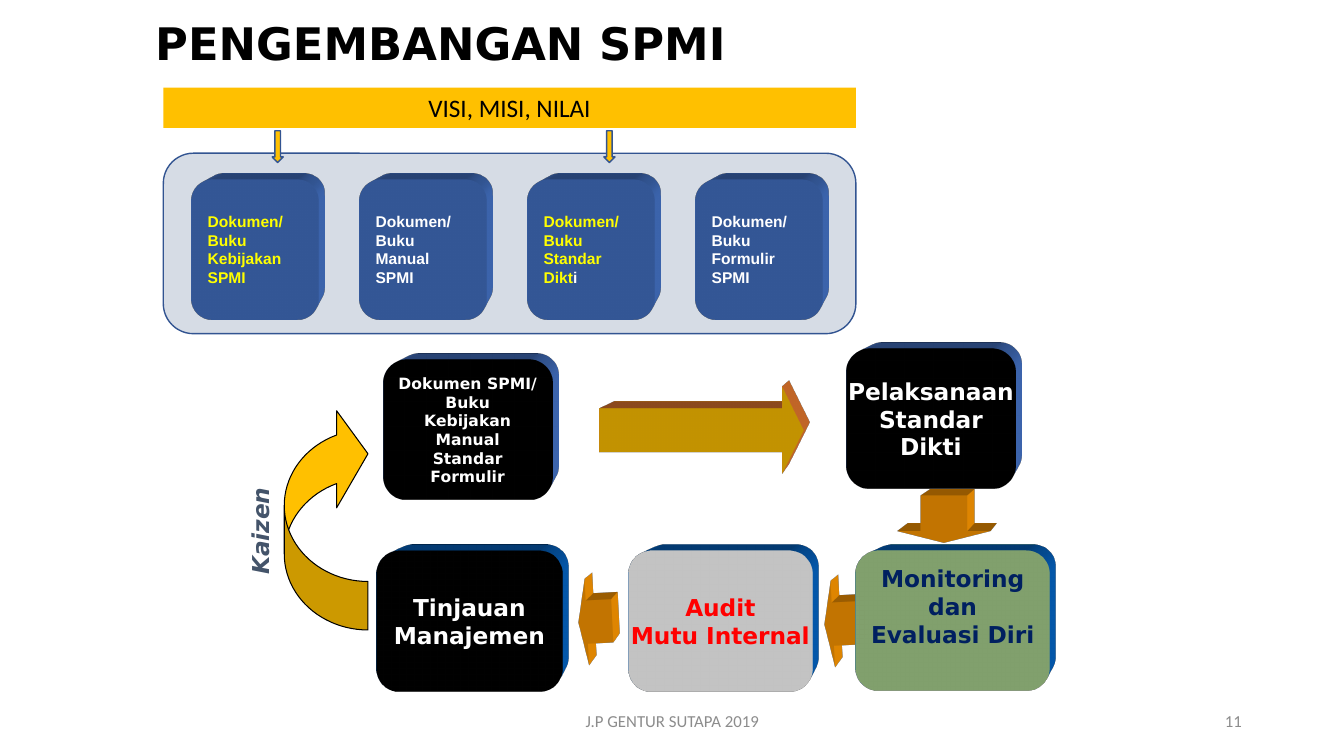
from dataclasses import dataclass
from typing import Optional

from lxml import etree
from pptx import Presentation
from pptx import util as u
from pptx.dml.color import RGBColor
from pptx.enum import shapes, text

A = "http://schemas.openxmlformats.org/drawingml/2006/main"
G = shapes.MSO_SHAPE
AL = text.PP_ALIGN
AN = text.MSO_ANCHOR


@dataclass(frozen=True)
class Theme:
    black: str = "000000"
    white: str = "FFFFFF"
    red: str = "FF0000"
    yellow: str = "FFFF00"
    navy: str = "002060"
    slate: str = "44546A"
    grey: str = "8C8C8C"
    gold: str = "FFC000"
    orange: str = "FF9900"
    rust: str = "ED7D31"
    green: str = "A9D18E"
    blue: str = "4472C4"
    deep_blue: str = "0563C1"
    outline: str = "325491"
    panel: str = "D6DCE5"
    title_size: float = 32
    banner_size: float = 18
    card_size: float = 16.6
    footer_size: float = 12
    small_size: float = 11.1
    heading_font: str = "DejaVu Sans"
    body_font: str = "Calibri"
    document_font: str = "Arial"


T = Theme()


@dataclass(frozen=True)
class Box:
    x: float
    y: float
    w: float
    h: float


@dataclass(frozen=True)
class Card:
    box: Box
    label: str
    fill: str
    color: str
    side: str
    size: float = T.card_size
    font: str = T.heading_font
    align: AL = AL.CENTER
    tail: str = ""
    bottom: float = 0.05


@dataclass(frozen=True)
class Arrow:
    box: Box
    kind: G
    fill: str
    side: Optional[str] = None
    line: Optional[str] = None
    line_width: float = 1
    rotation: float = 0
    adjustments: tuple[float, ...] = ()


CARD_H = 18.53
DOCUMENT_PITCH = 12.5
BLOCK = (0.5, 0.25)

DOCUMENTS = [
    ("Dokumen/\nBuku\nKebijakan\nSPMI", T.yellow, ""),
    ("Dokumen/\nBuku\nManual\nSPMI", T.white, ""),
    ("Dokumen/\nBuku\nStandar\nDikt", T.yellow, "i"),
    ("Dokumen/\nBuku\nFormulir\nSPMI", T.white, ""),
]

CYCLE = [
    Card(Box(27.98, 72.93, 13.88, CARD_H), "Tinjauan\nManajemen",
         T.black, T.white, T.deep_blue),
    Arrow(Box(43.05, 76.53, 2.48, 11.33), G.RIGHT_ARROW, T.orange, T.orange,
          rotation=177, adjustments=BLOCK),
    Card(Box(46.73, 72.93, 13.73, CARD_H), "Audit\nMutu Internal",
         T.white, T.red, T.deep_blue),
    Arrow(Box(61.35, 76.8, 2.48, 11.33), G.RIGHT_ARROW, T.orange, T.orange,
          rotation=177, adjustments=BLOCK),
    Card(Box(63.68, 72.8, 14.4, CARD_H), "Monitoring\ndan\nEvaluasi Diri",
         T.green, T.navy, T.deep_blue, bottom=0.33),
    Arrow(Box(68.48, 62.53, 3.45, 12.27), G.RIGHT_ARROW, T.orange, T.orange,
          rotation=90, adjustments=BLOCK),
    Card(Box(28.5, 47.6, 12.6, CARD_H),
         "Dokumen SPMI/\nBuku\nKebijakan\nManual\nStandar\nFormulir",
         T.black, T.white, T.blue, size=T.small_size),
    Arrow(Box(44.63, 51.2, 15.15, 11.47), G.RIGHT_ARROW, T.gold, T.rust,
          adjustments=BLOCK),
    Card(Box(63, 46.13, 12.53, CARD_H), "Pelaksanaan\nStandar\nDikti",
         T.black, T.white, T.blue),
    Arrow(Box(21.15, 53.6, 6.23, 29.73), G.CURVED_LEFT_ARROW, T.gold,
          line=T.black, line_width=0.75, rotation=180, adjustments=(0.58, 1.16, 0.375)),
]

prs = Presentation()
prs.slide_width = u.Inches(13.33)
prs.slide_height = u.Inches(7.5)
s = prs.slides.add_slide(prs.slide_layouts[5])


def place(box: Box) -> tuple[int, int, int, int]:
    return (int(prs.slide_width * box.x / 100), int(prs.slide_height * box.y / 100),
            int(prs.slide_width * box.w / 100), int(prs.slide_height * box.h / 100))


def write(sp, label: str, *, size: float, color: str, font: str = T.heading_font,
          bold: bool = False, italic: bool = False, align: AL = AL.LEFT,
          anchor: AN = AN.TOP, wrap: bool = True, spacing: float = 1,
          tail: str = "", bottom: float = 0.05) -> None:
    tf = sp.text_frame
    tf.auto_size = text.MSO_AUTO_SIZE.NONE
    tf.word_wrap = wrap
    tf.vertical_anchor = anchor
    tf.margin_left = tf.margin_right = u.Inches(0.1)
    tf.margin_top = u.Inches(0.05)
    tf.margin_bottom = u.Inches(bottom)
    lines = label.split("\n")
    for i, line in enumerate(lines):
        p = tf.paragraphs[0] if i == 0 else tf.add_paragraph()
        p.alignment = align
        p.line_spacing = spacing
        runs = [(line, color)]
        if tail and i == len(lines) - 1:
            runs.append((tail, T.white))
        for words, shade in runs:
            r = p.add_run()
            r.text = words
            r.font.size = u.Pt(size)
            r.font.name = font
            r.font.bold = bold
            r.font.italic = italic
            r.font.color.rgb = RGBColor.from_string(shade)


def extrude(sp, side: str) -> None:
    props = sp._element.spPr
    scene = etree.SubElement(props, f"{{{A}}}scene3d")
    etree.SubElement(scene, f"{{{A}}}camera", prst="legacyPerspectiveTopRight")
    etree.SubElement(scene, f"{{{A}}}lightRig", rig="legacyFlat3", dir="b")
    solid = etree.SubElement(props, f"{{{A}}}sp3d", extrusionH="430200",
                             prstMaterial="legacyMatte")
    tint = etree.SubElement(solid, f"{{{A}}}extrusionClr")
    etree.SubElement(tint, f"{{{A}}}srgbClr", val=side)


def add_shape(kind: G, box: Box, fill: str, line: Optional[str] = None,
              line_width: float = 1):
    sp = s.shapes.add_shape(kind, *place(box))
    sp.shadow.inherit = False
    sp.fill.solid()
    sp.fill.fore_color.rgb = RGBColor.from_string(fill)
    if line:
        sp.line.color.rgb = RGBColor.from_string(line)
        sp.line.width = u.Pt(line_width)
    else:
        sp.line.fill.background()
    return sp


def add_card(card: Card) -> None:
    sp = add_shape(G.FLOWCHART_ALTERNATE_PROCESS, card.box, card.fill)
    extrude(sp, card.side)
    write(sp, card.label, size=card.size, color=card.color, font=card.font, bold=True,
          align=card.align, anchor=AN.MIDDLE, wrap=False, tail=card.tail,
          bottom=card.bottom)


def add_arrow(arrow: Arrow) -> None:
    sp = add_shape(arrow.kind, arrow.box, arrow.fill, arrow.line, arrow.line_width)
    sp.rotation = arrow.rotation
    for i, value in enumerate(arrow.adjustments):
        sp.adjustments[i] = value
    if arrow.side:
        extrude(sp, arrow.side)


def add_text(box: Box, label: str, **style):
    sp = s.shapes.add_textbox(*place(box))
    write(sp, label, **style)
    return sp


def main() -> None:
    title = s.shapes.title
    title.left, title.top, title.width, title.height = place(Box(10.8, 2.53, 48.23, 7.47))
    write(title, "PENGEMBANGAN SPMI", size=T.title_size, color=T.black, bold=True,
          spacing=0.85)
    add_shape(G.ROUNDED_RECTANGLE, Box(12.15, 20.27, 51.53, 23.87), T.panel, T.outline)
    for item in CYCLE:
        if isinstance(item, Card):
            add_card(item)
        else:
            add_arrow(item)
    kaizen = add_text(Box(17.1, 65.2, 7.35, 10.13), "Kaizen", size=T.card_size,
                      color=T.slate, bold=True, italic=True, align=AL.CENTER, wrap=False)
    kaizen.rotation = 270
    for i, (label, color, tail) in enumerate(DOCUMENTS):
        box = Box(14.25 + i * DOCUMENT_PITCH, 23.73, 9.4, CARD_H)
        add_card(Card(box, label, T.blue, color, T.blue, T.small_size,
                      T.document_font, AL.LEFT, tail))
    footer = dict(size=T.footer_size, color=T.grey, font=T.body_font, anchor=AN.MIDDLE)
    add_text(Box(33.15, 92.67, 33.75, 5.33), "J.P GENTUR SUTAPA 2019",
             align=AL.CENTER, **footer)
    add_text(Box(70.65, 92.67, 22.5, 5.33), "11", align=AL.RIGHT, **footer)
    banner = add_shape(G.RECTANGLE, Box(12.15, 11.6, 51.53, 5.33), T.gold)
    write(banner, "VISI, MISI, NILAI", size=T.banner_size, color=T.black,
          font=T.body_font, align=AL.CENTER)
    for x in (20.25, 44.93):
        add_arrow(Arrow(Box(x, 17.3, 0.83, 4.2), G.DOWN_ARROW, T.gold, line=T.outline))
    prs.save("out.pptx")


if __name__ == "__main__":
    main()
